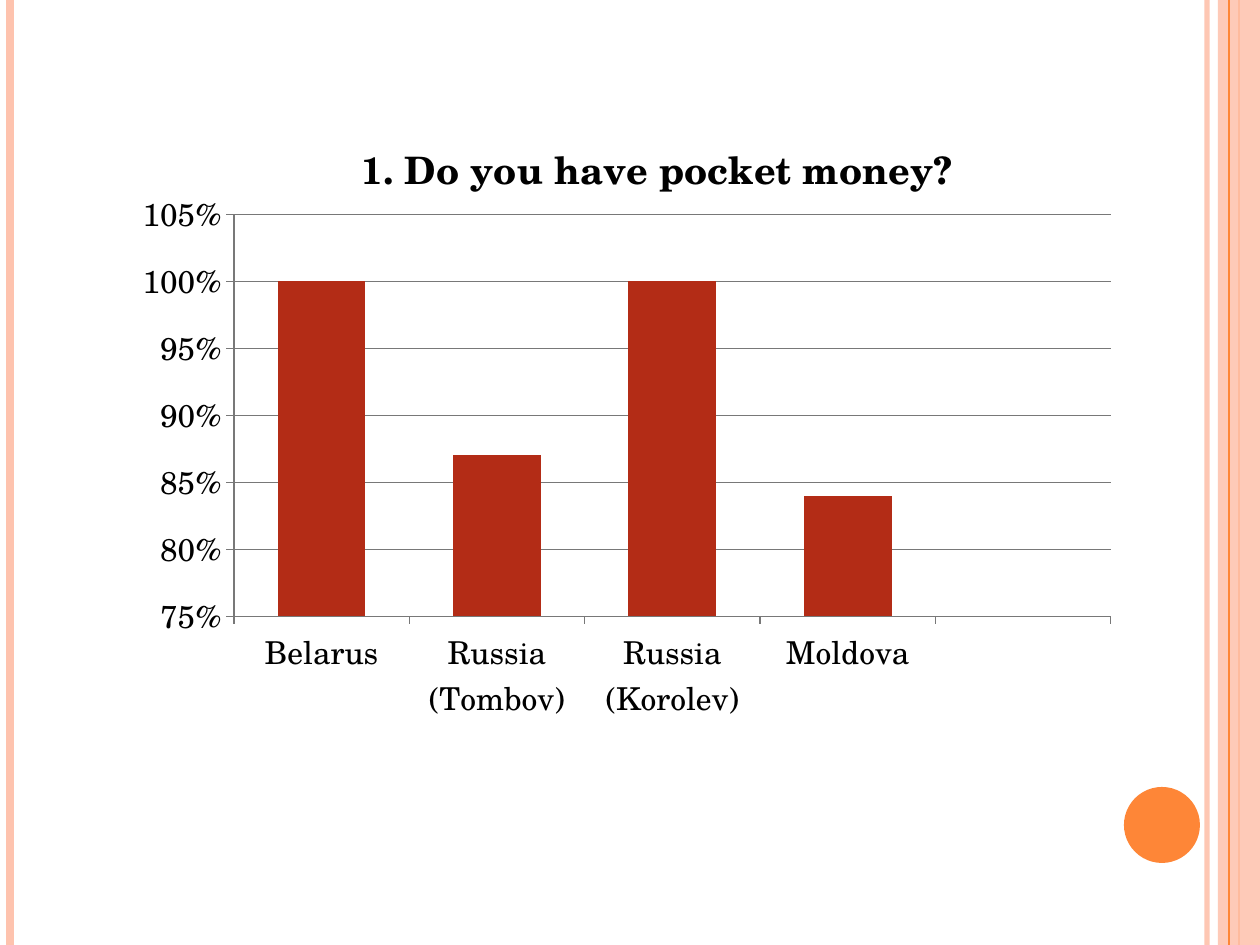
import lxml.etree
import pptx
import pptx.chart.data
import pptx.dml.color
import pptx.enum.chart
import pptx.enum.shapes
import pptx.oxml
import pptx.oxml.ns
import pptx.util

PEACH = pptx.dml.color.RGBColor(0xFE, 0xC3, 0xAE)
ORANGE = pptx.dml.color.RGBColor(0xFE, 0x86, 0x37)
BRICK = pptx.dml.color.RGBColor(0xB3, 0x2C, 0x16)
GRAY = pptx.dml.color.RGBColor(0x78, 0x78, 0x78)
BLACK = pptx.dml.color.RGBColor(0, 0, 0)
FONT = "TeX Gyre Schola"
WIDTH, HEIGHT = 1260, 945
SHAPES = pptx.enum.shapes.MSO_SHAPE
CHARTS = pptx.enum.chart


def px(length):
    return pptx.util.Emu(round(length * 914400 / 126))


def add_tag(parent, tag, **attributes):
    element = lxml.etree.SubElement(parent, pptx.oxml.ns.qn(tag))
    for name, value in attributes.items():
        element.set(name, str(value))
    return element


def set_opacity(properties, percent):
    for color in properties.iter(pptx.oxml.ns.qn("a:srgbClr")):
        add_tag(color, "a:alpha", val=percent * 1000)


def set_layout(parent, position, **fractions):
    for old in parent.findall(pptx.oxml.ns.qn("c:layout")):
        parent.remove(old)
    layout = lxml.etree.Element(pptx.oxml.ns.qn("c:layout"))
    parent.insert(position, layout)
    manual = add_tag(layout, "c:manualLayout")
    if "w" in fractions:
        add_tag(manual, "c:layoutTarget", val="inner")
    for mode in ("xMode", "yMode"):
        add_tag(manual, f"c:{mode}", val="edge")
    for name, value in fractions.items():
        add_tag(manual, f"c:{name}", val=value)


class SlidePainter:
    def __init__(self, slide):
        self.slide = slide
        self.shapes = slide.shapes

    def stripe(self, x, color, points, opacity=100):
        line = self.shapes.add_connector(
            pptx.enum.shapes.MSO_CONNECTOR.STRAIGHT, px(x), 0, px(x), px(HEIGHT))
        line.line.color.rgb = color
        line.line.width = pptx.util.Pt(points)
        properties = line._element.spPr
        add_tag(properties, "a:effectLst")
        if opacity < 100:
            set_opacity(properties, opacity)

    def shape(self, kind, left, top, width, height, color, opacity=100):
        shape = self.shapes.add_shape(kind, px(left), px(top), px(width), px(height))
        shape.shadow.inherit = False
        shape.fill.solid()
        shape.fill.fore_color.rgb = color
        shape.line.fill.background()
        if opacity < 100:
            set_opacity(shape._element.spPr, opacity)

    def style_line(self, line_format):
        line_format.color.rgb = GRAY
        line_format.width = pptx.util.Pt(0.75)

    def column_chart(self, left, top, width, height, title, categories, values):
        data = pptx.chart.data.CategoryChartData(number_format="0%")
        data.categories = categories
        data.add_series("Series 1", values)
        chart = self.shapes.add_chart(
            CHARTS.XL_CHART_TYPE.COLUMN_CLUSTERED,
            px(left), px(top), px(width), px(height), data).chart
        chart.font.name = FONT
        chart.font.size = pptx.util.Pt(18)
        chart.font.color.rgb = BLACK
        chart.has_legend = False

        chart.has_title = True
        frame = chart.chart_title.text_frame
        frame.text = title
        font = frame.paragraphs[0].font
        font.name = FONT
        font.size = pptx.util.Pt(21.6)
        font.bold = True
        font.color.rgb = BLACK
        set_layout(chart.chart_title._element, 1, x=0.23, y=0.08)

        plot = chart.plots[0]
        plot.gap_width = 100
        plot.vary_by_categories = False
        fill = plot.series[0].format.fill
        fill.solid()
        fill.fore_color.rgb = BRICK
        set_layout(chart._chartSpace.chart.plotArea, 0, x=0.11, y=0.21, w=0.87, h=0.61)

        for axis in (chart.category_axis, chart.value_axis):
            axis.major_tick_mark = CHARTS.XL_TICK_MARK.OUTSIDE
            axis.minor_tick_mark = CHARTS.XL_TICK_MARK.NONE
            self.style_line(axis.format.line)
        scale = chart.value_axis
        scale.minimum_scale = 0.75
        scale.maximum_scale = 1.05
        scale.major_unit = 0.05
        scale.tick_labels.number_format = "0%"
        scale.tick_labels.number_format_is_linked = False
        scale.has_major_gridlines = True
        self.style_line(scale.major_gridlines.format.line)


def main():
    deck = pptx.Presentation()
    deck.slide_width, deck.slide_height = px(WIDTH), px(HEIGHT)
    page = SlidePainter(deck.slides.add_slide(deck.slide_layouts[6]))

    page.stripe(1207, PEACH, 3, opacity=93)
    page.stripe(10, PEACH, 4.5)
    page.stripe(1239, ORANGE, 1.5)
    page.shape(SHAPES.RECTANGLE, 1218, 0, 42, HEIGHT, PEACH, opacity=87)
    page.stripe(1229, ORANGE, 0.75)
    page.shape(SHAPES.OVAL, 1124, 787, 76, 76, ORANGE)
    page.column_chart(
        123, 76, 1008, 659, "1. Do you have pocket money?",
        ["Belarus", "Russia (Tombov)", "Russia (Korolev)", "Moldova", ""],
        [1, 0.87, 1, 0.84, None])

    deck.save("out.pptx")


if __name__ == "__main__":
    main()
